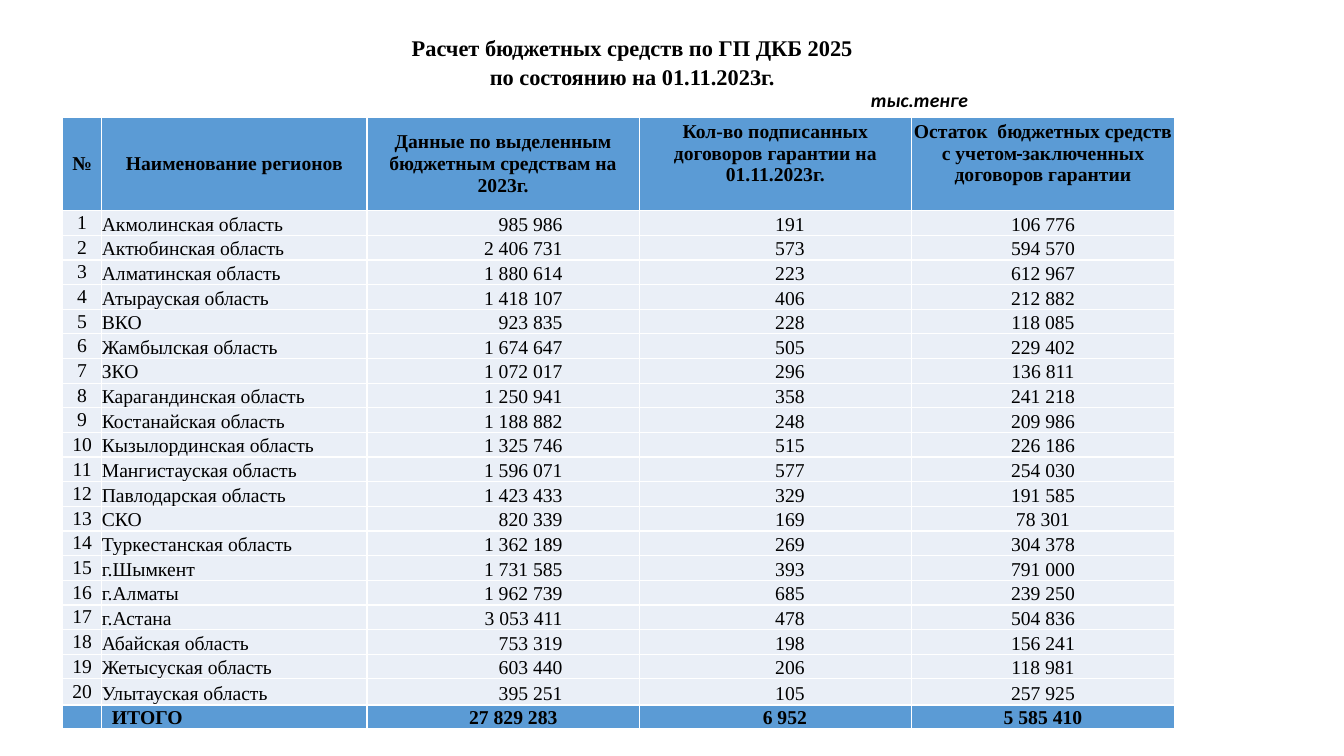
import pptx
import pptx.util
import pptx.dml.color
import pptx.enum.text
import pptx.oxml
import pptx.oxml.ns
from lxml import etree

Inches, Pt = pptx.util.Inches, pptx.util.Pt
RGBColor = pptx.dml.color.RGBColor
ALIGN, ANCHOR = pptx.enum.text.PP_ALIGN, pptx.enum.text.MSO_ANCHOR
qn = pptx.oxml.ns.qn

# Content
TITLE = ["Расчет бюджетных средств по ГП ДКБ 2025", "по состоянию на 01.11.2023г."]
UNIT = "тыс.тенге"
HEADERS = [
    ["№"],
    ["Наименование регионов"],
    ["Данные по выделенным бюджетным средствам на 2023г."],
    ["Кол-во подписанных договоров гарантии на 01.11.2023г."],
    ["Остаток  бюджетных средств с учетом", " ", "заключенных договоров гарантии"],
]
REGIONS = [
    ("Акмолинская область", "985 986", "191", "106 776"),
    ("Актюбинская область", "2 406 731", "573", "594 570"),
    ("Алматинская область", "1 880 614", "223", "612 967"),
    ("Атырауская область", "1 418 107", "406", "212 882"),
    ("ВКО", "923 835", "228", "118 085"),
    ("Жамбылская область", "1 674 647", "505", "229 402"),
    ("ЗКО", "1 072 017", "296", "136 811"),
    ("Карагандинская область", "1 250 941", "358", "241 218"),
    ("Костанайская область", "1 188 882", "248", "209 986"),
    ("Кызылординская область", "1 325 746", "515", "226 186"),
    ("Мангистауская область", "1 596 071", "577", "254 030"),
    ("Павлодарская область", "1 423 433", "329", "191 585"),
    ("СКО", "820 339", "169", "78 301"),
    ("Туркестанская область", "1 362 189", "269", "304 378"),
    ("г.Шымкент", "1 731 585", "393", "791 000"),
    ("г.Алматы", "1 962 739", "685", "239 250"),
    ("г.Астана", "3 053 411", "478", "504 836"),
    ("Абайская область", "753 319", "198", "156 241"),
    ("Жетысуская область", "603 440", "206", "118 981"),
    ("Улытауская область", "395 251", "105", "257 925"),
]
TOTAL = ("", "ИТОГО", "27 829 283", "6 952", "5 585 410")

# Style
SERIF, SANS = "Times New Roman", "Calibri"
BLACK = RGBColor(0x00, 0x00, 0x00)
BLUE = RGBColor(0x5B, 0x9B, 0xD5)
PALE = RGBColor(0xEA, 0xEF, 0xF7)
WHITE = RGBColor(0xFF, 0xFF, 0xFF)
COLUMN_WIDTHS = [0.39, 2.63, 2.7, 2.7, 2.61]
COLUMN_ALIGNS = [ALIGN.CENTER, ALIGN.LEFT, ALIGN.RIGHT, ALIGN.CENTER, ALIGN.CENTER]
# Left and right cell margins by column
BODY_MARGINS = [(0, 0), (0, 0), (0, 0.76), (0.29, 0), (0.01, 0.01)]
TOTAL_MARGINS = [(0, 0), (0.1, 0), (0, 0.81), (0.19, 0), (0.01, 0.01)]
TABLE_HEIGHT, HEADER_HEIGHT, LAST_REGION_HEIGHT, TOTAL_HEIGHT = 6.07, 0.93, 0.26, 0.23


def add_run(paragraph, text, size, font=SERIF, bold=False, italic=False):
    run = paragraph.add_run()
    run.text = text
    run.font.name, run.font.size = font, Pt(size)
    run.font.bold, run.font.italic = bold, italic
    run.font.color.rgb = BLACK
    return run


def add_borders(cell):
    properties = cell._tc.get_or_add_tcPr()
    for position, side in enumerate(("a:lnL", "a:lnR", "a:lnT", "a:lnB")):
        line = etree.Element(qn(side), w=str(Pt(1)))
        solid = etree.SubElement(line, qn("a:solidFill"))
        etree.SubElement(solid, qn("a:srgbClr"), val=str(WHITE))
        properties.insert(position, line)


def fill_cell(cell, texts, color, align, anchor, margins=(0, 0), top=0, bold=False):
    cell.fill.solid()
    cell.fill.fore_color.rgb = color
    add_borders(cell)
    cell.margin_left, cell.margin_right = map(Inches, margins)
    cell.margin_top, cell.margin_bottom = Inches(top), 0
    cell.vertical_anchor = anchor
    paragraph = cell.text_frame.paragraphs[0]
    paragraph.alignment = align
    for text in filter(None, texts):
        run = add_run(paragraph, text, 14, bold=bold)
        if text == " ":
            run._r.get_or_add_rPr().set("strike", "sngStrike")
    if not any(texts):
        etree.SubElement(paragraph._p, qn("a:endParaRPr"), sz="1400")


deck = pptx.Presentation()
deck.slide_width, deck.slide_height = Inches(13.33), Inches(7.5)
slide = deck.slides.add_slide(deck.slide_layouts[5])

# Title
title = slide.shapes.title
title.left, title.top, title.width, title.height = map(Inches, (0.42, 0.28, 11.7, 0.65))
title_frame = title.text_frame
title_frame.word_wrap = True
title_frame.auto_size = pptx.enum.text.MSO_AUTO_SIZE.NONE
title_frame.vertical_anchor = ANCHOR.TOP
heading = title_frame.paragraphs[0]
heading.alignment = ALIGN.CENTER
heading.line_spacing = 1.05
add_run(heading, TITLE[0], 16, bold=True)
heading.add_line_break()
add_run(heading, TITLE[1], 16, bold=True)

# Unit of measure
unit = slide.shapes.add_textbox(Inches(8.42), Inches(0.87), Inches(1.4), Inches(0.24))
unit_frame = unit.text_frame
unit_frame.word_wrap = True
unit_frame.margin_left = unit_frame.margin_right = 0
unit_frame.margin_top = unit_frame.margin_bottom = 0
unit_frame.paragraphs[0].alignment = ALIGN.CENTER
add_run(unit_frame.paragraphs[0], UNIT, 14, SANS, bold=True, italic=True)

# Budget table
region_height = (TABLE_HEIGHT - HEADER_HEIGHT - LAST_REGION_HEIGHT - TOTAL_HEIGHT) / (len(REGIONS) - 1)
row_heights = [HEADER_HEIGHT] + [region_height] * (len(REGIONS) - 1) + [LAST_REGION_HEIGHT, TOTAL_HEIGHT]
budget = slide.shapes.add_table(
    len(row_heights), len(COLUMN_WIDTHS), Inches(0.62), Inches(1.16),
    Inches(sum(COLUMN_WIDTHS)), Inches(TABLE_HEIGHT)).table
budget.horz_banding = False
for column, width in zip(budget.columns, COLUMN_WIDTHS):
    column.width = Inches(width)
for row, height in zip(budget.rows, row_heights):
    row.height = Inches(height)

for c, texts in enumerate(HEADERS):
    raised = c >= 3
    fill_cell(budget.cell(0, c), texts, BLUE, ALIGN.CENTER,
              ANCHOR.TOP if raised else ANCHOR.MIDDLE, top=0.04 if raised else 0, bold=True)

for r, region in enumerate(REGIONS, 1):
    for c, text in enumerate((str(r), *region)):
        fill_cell(budget.cell(r, c), [text], PALE, COLUMN_ALIGNS[c],
                  ANCHOR.BOTTOM if c else ANCHOR.MIDDLE, BODY_MARGINS[c])

for c, text in enumerate(TOTAL):
    fill_cell(budget.cell(len(REGIONS) + 1, c), [text], BLUE, COLUMN_ALIGNS[c],
              ANCHOR.BOTTOM, TOTAL_MARGINS[c], bold=True)

deck.save("out.pptx")
